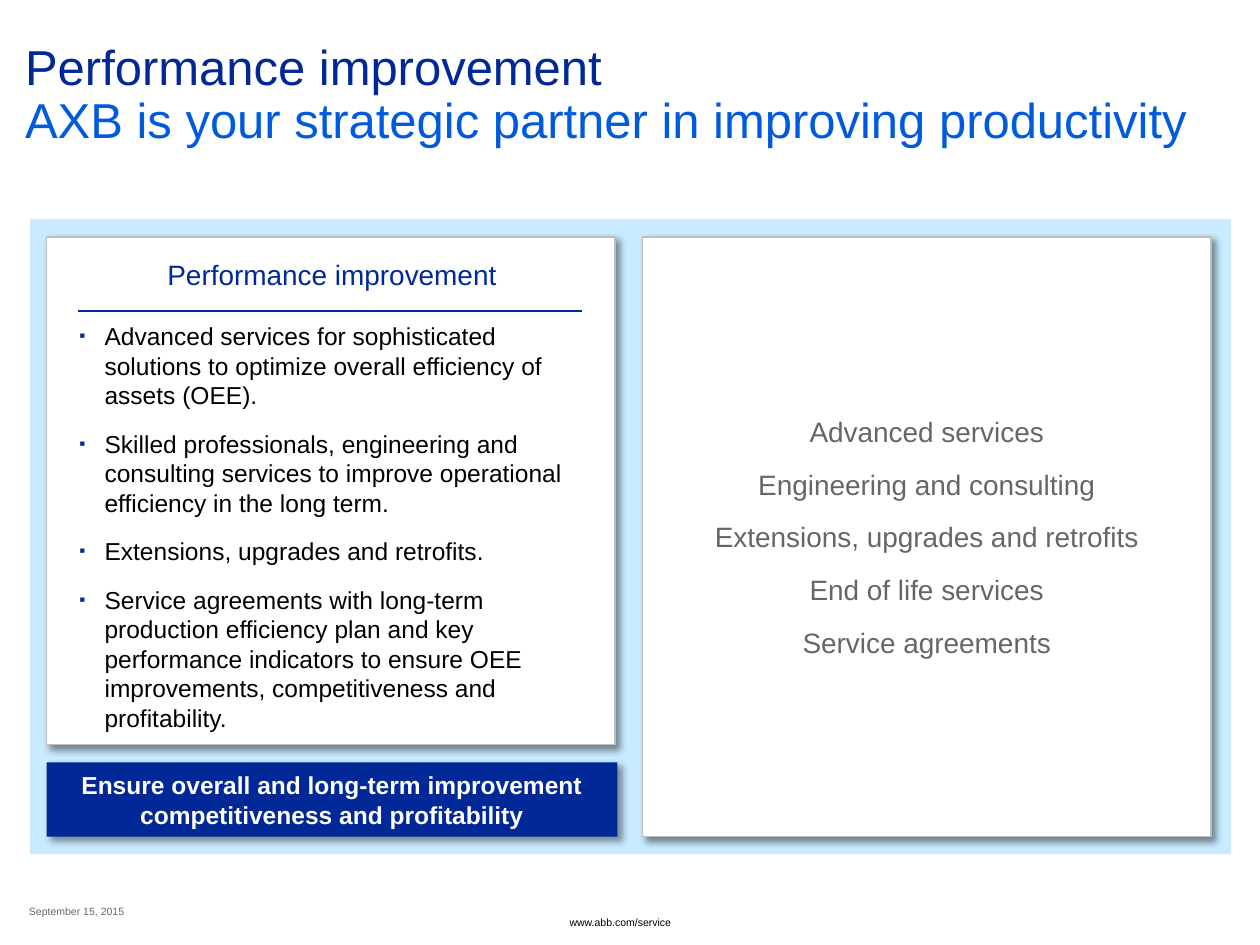
from lxml import etree
from pptx import Presentation
from pptx import util as u
from pptx.dml.color import RGBColor
from pptx.enum import shapes, text
from pptx.oxml import ns

NAVY = RGBColor(0x00, 0x28, 0x97)
BLUE = RGBColor(0x00, 0x5A, 0xDE)
PALE_BLUE = RGBColor(0xC8, 0xEB, 0xFF)
WHITE = RGBColor(0xFF, 0xFF, 0xFF)
BLACK = RGBColor(0x00, 0x00, 0x00)
GRAY = RGBColor(0x66, 0x66, 0x66)
BORDER = RGBColor(0xBF, 0xBF, 0xBF)

RECTANGLE = shapes.MSO_SHAPE.RECTANGLE
BANNER = shapes.MSO_SHAPE.PENTAGON
LEFT, TOP, WIDTH, BANNER_HEIGHT = 0.37, 1.88, 4.51, 0.59
BANNER_WIDTH = 4.53

BENEFITS = [
    "Advanced services for sophisticated solutions to optimize overall efficiency of assets (OEE).",
    "Skilled professionals, engineering and consulting services to improve operational efficiency in the long term.",
    "Extensions, upgrades and retrofits.",
    "Service agreements with long-term production efficiency plan and key performance indicators "
    "to ensure OEE improvements, competitiveness and profitability.",
]
SERVICES = [
    "Advanced services",
    "Engineering and consulting",
    "Extensions, upgrades and retrofits",
    "End of life services",
    "Service agreements",
]


def add_child(parent, tag, **attributes):
    child = etree.SubElement(parent, ns.qn(tag))
    for name, value in attributes.items():
        child.set(name, str(value))
    return child


def add_shadow(box, opacity):
    effects = box._element.spPr.find(ns.qn("a:effectLst"))
    shadow = add_child(effects, "a:outerShdw", blurRad=u.Pt(4), dist=u.Pt(3),
                       dir=45 * 60000, algn="tl", rotWithShape=0)
    color = add_child(shadow, "a:srgbClr", val=BLACK)
    add_child(color, "a:alpha", val=opacity * 1000)


def add_bullet(para):
    properties = para._p.get_or_add_pPr()
    properties.set("marL", str(u.Inches(0.2)))
    properties.set("indent", str(-u.Inches(0.2)))
    color = add_child(properties, "a:buClr")
    add_child(color, "a:srgbClr", val=NAVY)
    add_child(properties, "a:buSzPct", val=70000)
    add_child(properties, "a:buFont", typeface="Arial")
    add_child(properties, "a:buChar", char="▪")


def write(box, lines, size, color, bold=False, centered=False, bullets=False,
          margins=(0, 0, 0, 0), spacing=1.0, gap=0):
    frame = box.text_frame
    frame.word_wrap = True
    frame.auto_size = text.MSO_AUTO_SIZE.NONE
    frame.vertical_anchor = text.MSO_ANCHOR.MIDDLE if centered else text.MSO_ANCHOR.TOP
    (frame.margin_left, frame.margin_top,
     frame.margin_right, frame.margin_bottom) = map(u.Inches, margins)
    for index, line in enumerate(lines):
        para = frame.add_paragraph() if index else frame.paragraphs[0]
        para.alignment = text.PP_ALIGN.CENTER if centered else text.PP_ALIGN.LEFT
        para.line_spacing = spacing
        if index:
            para.space_before = u.Pt(gap)
        if bullets:
            add_bullet(para)
        span = para.add_run()
        span.text = line
        span.font.name = "Arial"
        span.font.size = u.Pt(size)
        span.font.bold = bold
        span.font.color.rgb = color


def add_label(page, left, top, width, height, line, size, color, **layout):
    box = page.shapes.add_textbox(*map(u.Inches, (left, top, width, height)))
    write(box, [line], size, color, **layout)


def add_panel(page, left, top, width, height, fill=None, line=None, opacity=0, kind=RECTANGLE):
    box = page.shapes.add_shape(kind, *map(u.Inches, (left, top, width, height)))
    box.shadow.inherit = False
    if kind == BANNER:
        box.adjustments[0] = 0
    if fill is None:
        box.fill.background()
    else:
        box.fill.solid()
        box.fill.fore_color.rgb = fill
    if line is None:
        box.line.fill.background()
    else:
        box.line.color.rgb = line
        box.line.width = u.Pt(1)
    if opacity:
        add_shadow(box, opacity)
    return box


def add_rule(page, left, right, top):
    rule = page.shapes.add_connector(shapes.MSO_CONNECTOR.STRAIGHT,
                                     *map(u.Inches, (left, top, right, top)))
    rule.line.color.rgb = NAVY
    rule.line.width = u.Pt(1)
    add_child(rule._element.spPr, "a:effectLst")


def main():
    deck = Presentation()
    deck.slide_width, deck.slide_height = u.Inches(10), u.Inches(7.5)
    page = deck.slides.add_slide(deck.slide_layouts[6])

    add_label(page, 4.52, 7.27, 1.15, 0.15, "www.abb.com/service", 6, BLACK)
    add_label(page, 0.23, 7.18, 0.79, 0.12, "September 15, 2015", 6, GRAY)
    add_label(page, 0, 0, 10, 0.76, "Performance improvement", 28, NAVY,
              margins=(0.2, 0.34, 0.24, 0), spacing=0.9)
    add_label(page, 0, 0.76, 10, 0.67, "AXB is your strategic partner in improving productivity",
              28, BLUE, margins=(0.2, 0, 0.24, 0), spacing=0.9)

    add_panel(page, 0.24, 1.74, 9.53, 5.04, PALE_BLUE)
    services = add_panel(page, 5.1, TOP, WIDTH, 4.76, WHITE, BORDER, 43)
    write(services, SERVICES, 16, GRAY, centered=True, margins=(0.08,) * 4, gap=11)

    benefits = add_panel(page, LEFT, TOP, WIDTH, 4.03, WHITE, BORDER, 43)
    write(benefits, BENEFITS, 14, BLACK, bullets=True,
          margins=(0.26, 0.67, 0.26, 0.08), gap=11)

    heading = add_panel(page, LEFT, TOP, BANNER_WIDTH, BANNER_HEIGHT, kind=BANNER)
    write(heading, ["Performance improvement"], 16, NAVY, centered=True, margins=(0.08,) * 4)
    add_rule(page, 0.62, 4.62, TOP + BANNER_HEIGHT)

    promise = add_panel(page, LEFT, 6.05, BANNER_WIDTH, BANNER_HEIGHT, NAVY,
                        opacity=40, kind=BANNER)
    write(promise, ["Ensure overall and long-term improvement competitiveness and profitability"],
          14, WHITE, bold=True, centered=True, margins=(0.07,) * 4)

    deck.save("out.pptx")


if __name__ == "__main__":
    main()
